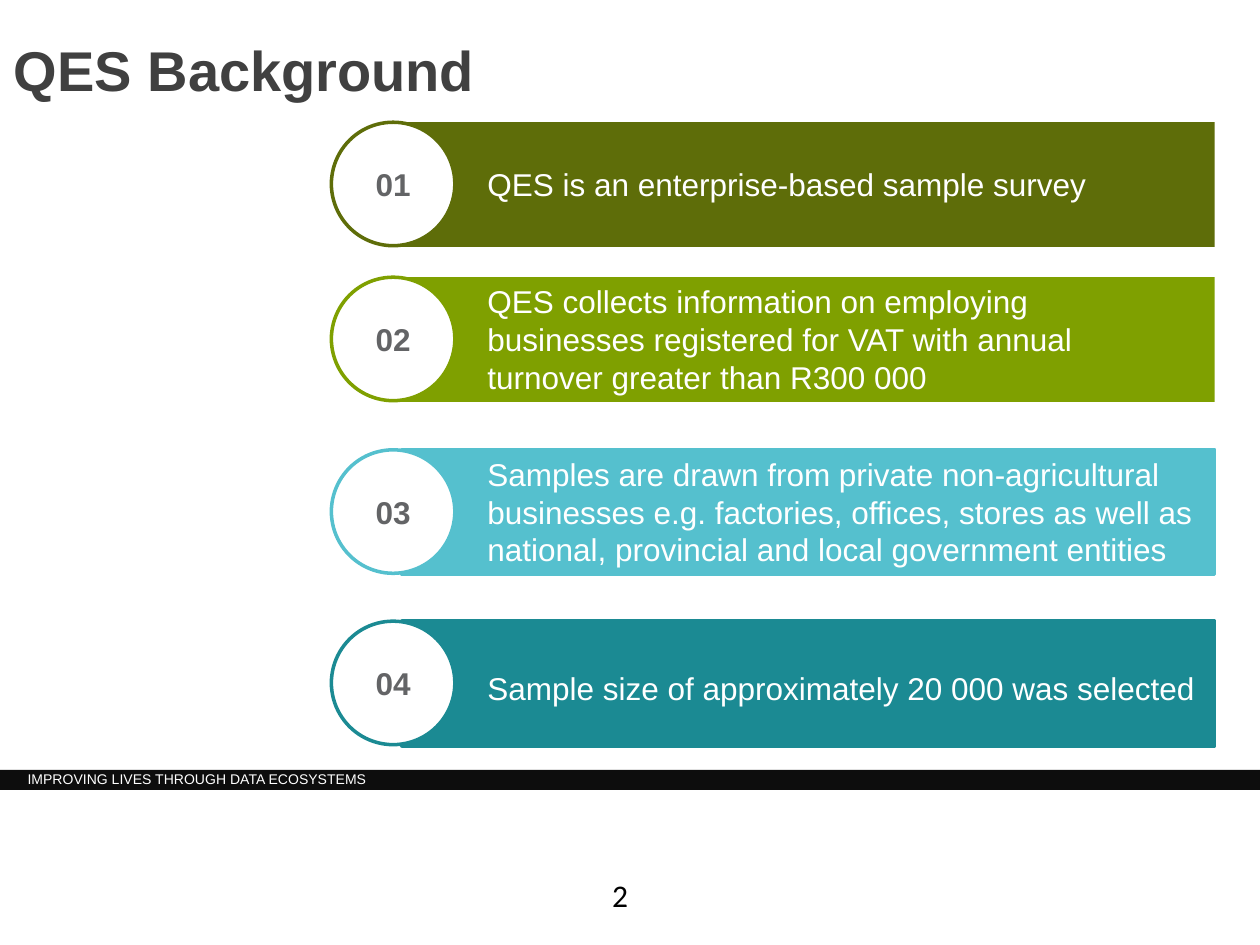
from pptx import Presentation
from pptx.dml.color import RGBColor
from pptx.enum.shapes import MSO_SHAPE
from pptx.enum.text import MSO_ANCHOR, PP_ALIGN
from pptx.util import Inches, Pt

COLORS = {
    "olive": "5E6D09", "green": "7FA000", "aqua": "55C0CE", "teal": "1B8A93",
    "white": "FFFFFF", "number": "636466", "title": "404040",
    "strip": "0D0D0D", "black": "000000",
}
TITLE = "QES Background"
SLOGAN = "IMPROVING LIVES THROUGH DATA ECOSYSTEMS"
PAGE_NUMBER = "2"

# Statement, colour, bar outlined, bar top, text top, text width, text height
POINTS = [
    ("QES is an enterprise-based sample survey",
     "olive", False, 0.97, 1.26, 5.73, 0.4),
    ("QES collects information on employing businesses registered for VAT "
     "with annual turnover greater than R300 000",
     "green", False, 2.2, 2.19, 5.73, 1.01),
    ("Samples are drawn from private non-agricultural businesses e.g. factories, "
     "offices, stores as well as national, provincial and local government entities",
     "aqua", True, 3.57, 3.56, 5.87, 1.01),
    ("Sample size of approximately 20 000 was selected",
     "teal", True, 4.93, 5.26, 5.89, 0.4),
]
SLIDE_WIDTH, SLIDE_HEIGHT = 10, 7.5
BAR_LEFT, BAR_WIDTH, BAR_HEIGHT = 3.19, 6.45, 0.99
CIRCLE_LEFT, CIRCLE_SIZE = 2.63, 0.98
TEXT_LEFT = 3.77


def rgb(name):
    return RGBColor.from_string(COLORS[name])


def write(shape, text, size, color, bold=False, font="Arial",
          align=PP_ALIGN.LEFT, anchor=MSO_ANCHOR.TOP, wrap=True):
    frame = shape.text_frame
    frame.word_wrap = wrap
    frame.vertical_anchor = anchor
    frame.text = text
    paragraph = frame.paragraphs[0]
    paragraph.alignment = align
    paragraph.font.name = font
    paragraph.font.size = Pt(size)
    paragraph.font.bold = bold
    paragraph.font.color.rgb = rgb(color)


def add_text(slide, box, *args, **style):
    write(slide.shapes.add_textbox(*map(Inches, box)), *args, **style)


def add_filled(slide, kind, box, fill, outline=None):
    shape = slide.shapes.add_shape(kind, *map(Inches, box))
    shape.shadow.inherit = False
    shape.fill.solid()
    shape.fill.fore_color.rgb = rgb(fill)
    if outline:
        shape.line.color.rgb = rgb(outline)
        shape.line.width = Pt(2)
    else:
        shape.line.fill.background()
    return shape


def add_point(slide, number, statement, color, outlined, top,
              text_top, text_width, text_height):
    add_filled(slide, MSO_SHAPE.RECTANGLE, (BAR_LEFT, top, BAR_WIDTH, BAR_HEIGHT),
               color, color if outlined else None)
    circle = add_filled(slide, MSO_SHAPE.OVAL,
                        (CIRCLE_LEFT, top, CIRCLE_SIZE, CIRCLE_SIZE), "white", color)
    write(circle, f"{number:02}", 18, "number", bold=True,
          align=PP_ALIGN.CENTER, anchor=MSO_ANCHOR.MIDDLE)
    add_text(slide, (TEXT_LEFT, text_top, text_width, text_height),
             statement, 18, "white")


def main():
    deck = Presentation()
    deck.slide_width, deck.slide_height = Inches(SLIDE_WIDTH), Inches(SLIDE_HEIGHT)
    slide = deck.slides.add_slide(deck.slide_layouts[5])

    title = slide.shapes.title
    title.left, title.top, title.width, title.height = map(Inches, (0.01, 0.2, 4.6, 0.69))
    write(title, TITLE, 32, "title", bold=True, anchor=MSO_ANCHOR.MIDDLE)

    add_filled(slide, MSO_SHAPE.RECTANGLE, (0, 6.11, SLIDE_WIDTH, 0.16), "strip")
    add_text(slide, (0.12, 6.07, 3.39, 0.24), SLOGAN, 8, "white")

    for number, point in enumerate(POINTS, start=1):
        add_point(slide, number, *point)

    add_text(slide, (4.76, 6.9, 0.33, 0.4), PAGE_NUMBER, 18, "black",
             font="Calibri", wrap=False)
    deck.save("out.pptx")


if __name__ == "__main__":
    main()
